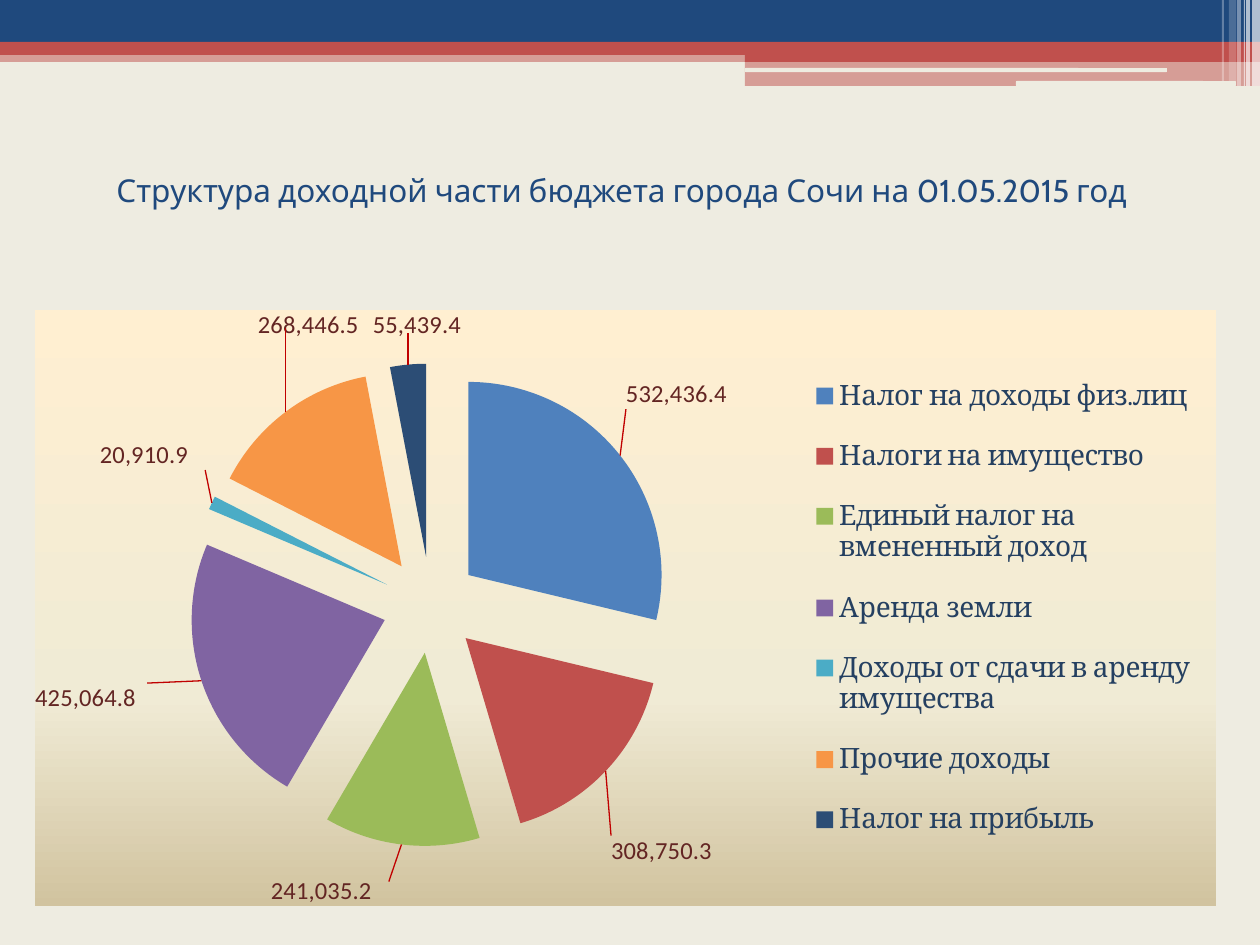
"""Build the slide on the revenue structure of the Sochi city budget."""
from typing import NamedTuple

from lxml.etree import SubElement
from pptx import Presentation
from pptx.chart.data import CategoryChartData
from pptx.dml.color import RGBColor
from pptx.enum.chart import XL_CHART_TYPE as ChartType
from pptx.enum.chart import XL_LABEL_POSITION as LabelPosition
from pptx.enum.chart import XL_LEGEND_POSITION as LegendPosition
from pptx.enum.shapes import MSO_SHAPE as Preset
from pptx.enum.text import MSO_ANCHOR as Anchor
from pptx.enum.text import PP_ALIGN as Align
from pptx.oxml import parse_xml
from pptx.oxml.ns import nsdecls, qn
from pptx.util import Emu, Pt

COLORS = {
    "paper": "EEECE1", "navy": "1F497D", "red": "C0504D", "white": "FFFFFF",
    "legend": "254061", "label": "632523", "leader": "C00000", "text": "000000",
}
NUMBER_FORMAT = "#,##0.0_р_."
BACKDROP = ((0, "FFEFD1"), (65, "F0EBD5"), (100, "D1C39F"))


class Band(NamedTuple):
    left: int
    top: int
    width: int
    height: int
    color: str
    opacity: int = 100
    preset: Preset = Preset.RECTANGLE


class Income(NamedTuple):
    name: str
    amount: float
    color: str
    label_dx: float
    label_dy: float


BANDS = (
    Band(0, 50, 1260, 12, "red", 50),
    Band(0, 0, 1260, 43, "navy"),
    Band(0, 42, 1260, 13, "red"),
    Band(745, 49, 515, 13, "red"),
    Band(745, 61, 515, 25, "red", 50),
    Band(745, 68, 422, 4, "paper", preset=Preset.ROUNDED_RECTANGLE),
    Band(1016, 81, 220, 5, "paper", preset=Preset.ROUNDED_RECTANGLE),
    Band(1252, 0, 8, 86, "white", 65),
    Band(1246, 0, 4, 86, "white", 65),
    Band(1244, 0, 1, 86, "white", 60),
    Band(1237, 0, 4, 86, "white", 40),
    Band(1229, 0, 7, 81, "white", 20),
    Band(1222, 0, 2, 81, "white", 30),
)
INCOMES = (
    Income("Налог на доходы физ.лиц", 532436.4, "4F81BD", 0, -0.07),
    Income("Налоги на имущество", 308750.3, "C0504D", 0, 0.1),
    Income("Единый налог на вмененный доход", 241035.2, "9BBB59", -0.01, 0.05),
    Income("Аренда земли", 425064.8, "8064A2", -0.04, 0),
    Income("Доходы от сдачи в аренду имущества", 20910.9, "4BACC6", 0, -0.05),
    Income("Прочие доходы", 268446.5, "F79646", 0.08, -0.13),
    Income("Налог на прибыль", 55439.4, "2C4D75", 0.06, -0.04),
)


def px(length: int) -> Emu:
    """Convert px to EMU."""
    return Emu(round(length * 914400 / 126))


def set_font(font, name: str, size: int, color: str) -> None:
    """Apply family, size and colour."""
    for attribute, value in {"name": name, "size": Pt(size)}.items():
        setattr(font, attribute, value)
    font.color.rgb = RGBColor.from_string(COLORS[color])


def fill_solid(fill, color: str) -> None:
    """Fill with one hex colour."""
    fill.solid()
    fill.fore_color.rgb = RGBColor.from_string(color)


def draw_band(slide, band: Band) -> None:
    """Draw one strip of the header."""
    strip = slide.shapes.add_shape(band.preset, *map(px, band[:4]))
    strip.shadow.inherit = False
    fill_solid(strip.fill, COLORS[band.color])
    strip.line.fill.background()
    if band.opacity < 100:
        tint = strip.fill._xPr.find(".//" + qn("a:srgbClr"))
        SubElement(tint, qn("a:alpha"), val=str(band.opacity * 1000))


def make_layout(target: str = "", **values: float):
    """Make a manual chart layout in fractions of the chart."""
    modes = {"layoutTarget": target, "xMode": "edge", "yMode": "edge"} if target else {}
    parts = "".join(f'<c:{key} val="{value}"/>' for key, value in {**modes, **values}.items())
    return parse_xml(f'<c:layout {nsdecls("c")}><c:manualLayout>{parts}</c:manualLayout></c:layout>')


def place_title(slide, wording: str) -> None:
    """Move and format the title placeholder."""
    title = slide.shapes.title
    box = dict(zip(("left", "top", "width", "height"), map(px, (35, 116, 1181, 147))))
    for attribute, value in box.items():
        setattr(title, attribute, value)
    frame = title.text_frame
    frame.text = wording
    frame.word_wrap = True
    frame.vertical_anchor = Anchor.MIDDLE
    frame.paragraphs[0].alignment = Align.CENTER
    set_font(frame.paragraphs[0].runs[0].font, "Cabin", 18, "navy")


def format_slices(series) -> None:
    """Colour and explode the slices and place their labels."""
    labels = series.data_labels
    for attribute, value in {"show_value": True, "number_format": NUMBER_FORMAT,
                             "number_format_is_linked": False,
                             "position": LabelPosition.OUTSIDE_END}.items():
        setattr(labels, attribute, value)
    set_font(labels.font, "Calibri", 14, "label")
    for index, income in enumerate(INCOMES):
        point = series.points[index]
        fill_solid(point.format.fill, income.color)
        point.format.line.fill.background()
        set_font(point.data_label.font, "Calibri", 14, "label")
        point.data_label.position = LabelPosition.OUTSIDE_END
    for label, income in zip(labels._element.findall(qn("c:dLbl")), INCOMES):
        layout = make_layout(x=income.label_dx, y=income.label_dy)
        label.find(qn("c:idx")).addnext(layout)
        layout.addnext(parse_xml(
            f'<c:numFmt {nsdecls("c")} formatCode="{NUMBER_FORMAT}" sourceLinked="0"/>'))
    for old in labels._element.findall(qn("c:showLeaderLines")):
        labels._element.remove(old)
    SubElement(labels._element, qn("c:showLeaderLines"), val="1")
    labels._element.append(parse_xml(
        f'<c:leaderLines {nsdecls("c", "a")}><c:spPr><a:ln w="9525"><a:solidFill>'
        f'<a:srgbClr val="{COLORS["leader"]}"/></a:solidFill></a:ln></c:spPr></c:leaderLines>'))
    series._element.find(qn("c:dPt")).addprevious(
        parse_xml(f'<c:explosion {nsdecls("c")} val="25"/>'))


def add_income_chart(slide) -> None:
    """Add the exploded pie of budget income."""
    data = CategoryChartData(number_format="#,##0.0")
    data.categories = [income.name for income in INCOMES]
    data.add_series("Series 1", [income.amount for income in INCOMES])
    chart = slide.shapes.add_chart(ChartType.PIE, *map(px, (35, 310, 1181, 596)), data).chart
    chart.has_title = False
    set_font(chart.font, "Cambria", 18, "text")
    chart.has_legend = True
    legend = chart.legend
    legend.position = LegendPosition.RIGHT
    legend.include_in_layout = False
    set_font(legend.font, "Cambria", 16, "legend")
    for old in legend._element.findall(qn("c:layout")):
        legend._element.remove(old)
    legend._element.find(qn("c:legendPos")).addnext(make_layout("", xMode="edge", yMode="edge",
                                                              x=0.65, y=0.07, w=0.34, h=0.86))
    chart.plots[0].vary_by_categories = True
    format_slices(chart.plots[0].series[0])
    plot_area = chart._chartSpace.chart.plotArea
    for old in plot_area.findall(qn("c:layout")):
        plot_area.remove(old)
    plot_area.insert(0, make_layout("inner", x=0.06, y=0.09, w=0.55, h=0.81))
    stops = "".join(f'<a:gs pos="{place * 1000}"><a:srgbClr val="{color}"/></a:gs>'
                    for place, color in BACKDROP)
    chart._chartSpace.chart.addnext(parse_xml(
        f'<c:spPr {nsdecls("c", "a")}><a:gradFill><a:gsLst>{stops}</a:gsLst>'
        '<a:lin ang="5400000" scaled="0"/></a:gradFill><a:ln><a:noFill/></a:ln></c:spPr>'))


def main() -> None:
    """Assemble and save the slide."""
    deck = Presentation()
    deck.slide_width, deck.slide_height = px(1260), px(945)
    slide = deck.slides.add_slide(deck.slide_layouts[5])
    fill_solid(slide.background.fill, COLORS["paper"])
    for band in BANDS:
        draw_band(slide, band)
    place_title(slide, "Структура доходной части бюджета города Сочи на 01.05.2015 год ")
    add_income_chart(slide)
    deck.save("out.pptx")


if __name__ == "__main__":
    main()
